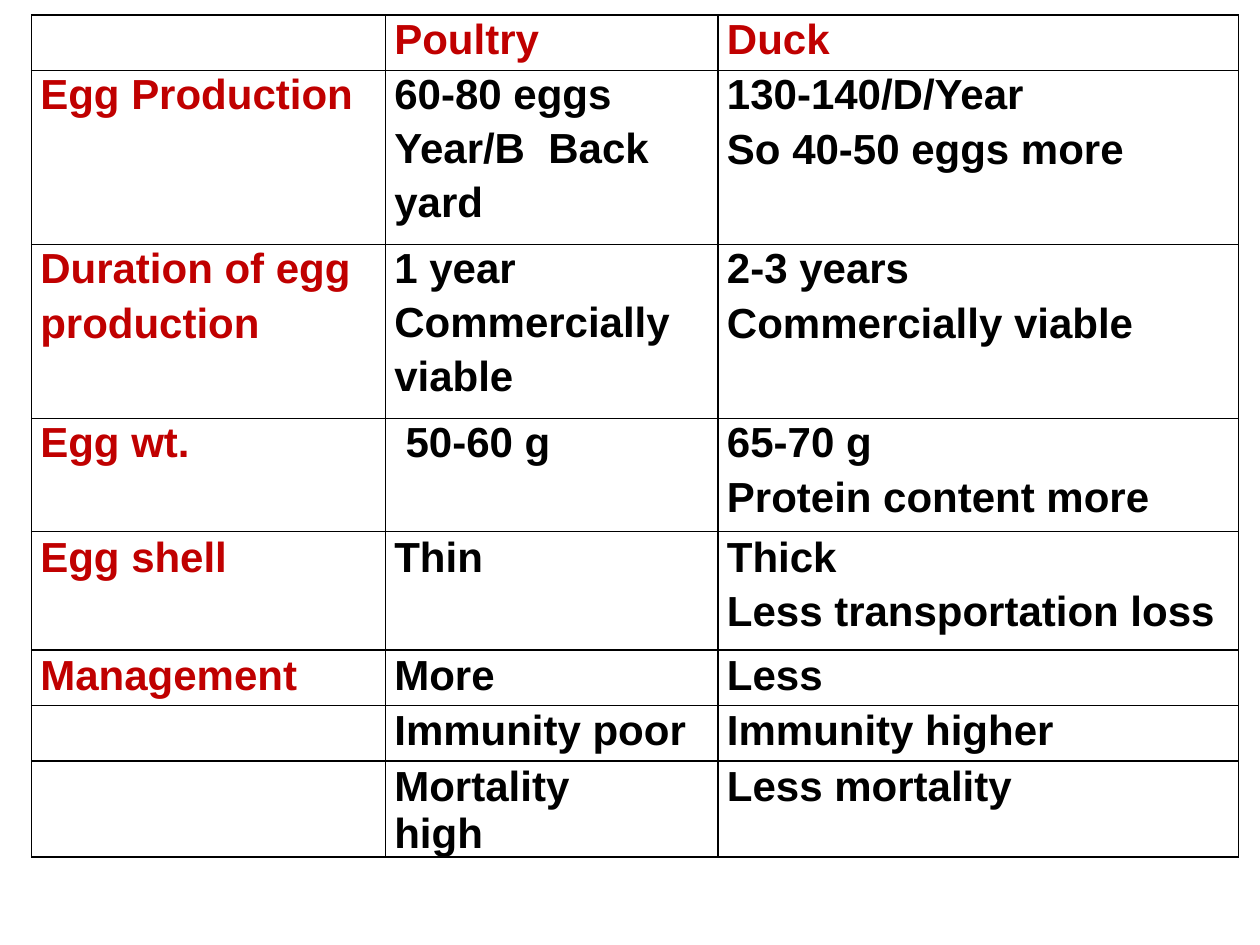
from dataclasses import dataclass

from lxml import etree
from pptx import Presentation
from pptx.dml.color import RGBColor
from pptx.oxml.ns import qn
from pptx.util import Inches, Pt


@dataclass(frozen=True)
class Theme:
    font: str = "Arial"
    size: int = 24
    head: str = "C00000"
    body: str = "000000"
    line: str = "000000"
    rule: int = 1


THEME = Theme()
SIDES = ("lnL", "lnR", "lnT", "lnB")
WIDTHS = (2.81, 2.64, 4.13)
HEIGHTS = (0.44, 1.38, 1.38, 0.9, 0.94, 0.44, 0.44, 0.44)
ROWS = (
    ("", "Poultry", "Duck"),
    ("Egg Production", "60-80 eggs\nYear/B  Back yard",
     "130-140/D/Year\nSo 40-50 eggs more"),
    ("Duration of egg\nproduction", "1 year\nCommercially  viable",
     "2-3 years\nCommercially viable"),
    ("Egg wt.", "50-60 g", "65-70 g\nProtein content more"),
    ("Egg shell", "Thin", "Thick\nLess transportation loss"),
    ("Management", "More", "Less"),
    ("", "Immunity poor", "Immunity higher"),
    ("", "Mortality\thigh", "Less mortality"),
)
INDENT = 0.07
INDENTS = {(3, 1): 0.16}
TAB = 1.64
TAB_RIGHT = 0.5


def apply(item, values):
    for name, value in values.items():
        setattr(item, name, value)


def add_rules(cell):
    props = cell._tc.get_or_add_tcPr()
    for side in SIDES:
        line = etree.SubElement(props, qn(f"a:{side}"), w=str(Pt(THEME.rule)))
        fill = etree.SubElement(line, qn("a:solidFill"))
        etree.SubElement(fill, qn("a:srgbClr"), val=THEME.line)


def set_tab(para):
    props = para._p.get_or_add_pPr()
    props.set("marR", str(Inches(TAB_RIGHT)))
    tabs = etree.SubElement(props, qn("a:tabLst"))
    etree.SubElement(tabs, qn("a:tab"), pos=str(Inches(TAB)), algn="l")


def add_line(para, text, color, indent, space):
    apply(para, space)
    props = para._p.get_or_add_pPr()
    props.set("marL", str(Inches(indent)))
    props.set("indent", "0")
    if "\t" in text:
        set_tab(para)
    run = para.add_run()
    run.text = text
    apply(run.font, {"name": THEME.font, "size": Pt(THEME.size), "bold": True})
    run.font.color.rgb = RGBColor.from_string(color)


def fill_cell(cell, text, row, col):
    add_rules(cell)
    cell.fill.background()
    if not text:
        return
    apply(cell, {"margin_left": 0, "margin_right": 0, "margin_bottom": 0,
                 "margin_top": Inches(0.01 if row < 4 else 0.02)})
    color = THEME.head if row == 0 or col == 0 else THEME.body
    indent = INDENTS.get((row, col), INDENT)
    first = {"space_before": Pt(1)}
    later = {"line_spacing": 1.15} if col == 1 else {"space_before": Pt(4.4)}
    frame = cell.text_frame
    for i, line in enumerate(text.split("\n")):
        para = frame.add_paragraph() if i else frame.paragraphs[0]
        add_line(para, line, color, indent, later if i else first)


def add_grid(slide):
    table = slide.shapes.add_table(
        len(ROWS), len(WIDTHS), Inches(0.25), Inches(0.12),
        Inches(sum(WIDTHS)), Inches(sum(HEIGHTS))).table
    apply(table, {"first_row": False, "horz_banding": False})
    for col, width in zip(table.columns, WIDTHS):
        col.width = Inches(width)
    for row, height in zip(table.rows, HEIGHTS):
        row.height = Inches(height)
    for r, texts in enumerate(ROWS):
        for c, text in enumerate(texts):
            fill_cell(table.cell(r, c), text, r, c)


def main():
    deck = Presentation()
    apply(deck, {"slide_width": Inches(10), "slide_height": Inches(7.5)})
    add_grid(deck.slides.add_slide(deck.slide_layouts[6]))
    deck.save("out.pptx")


if __name__ == "__main__":
    main()
